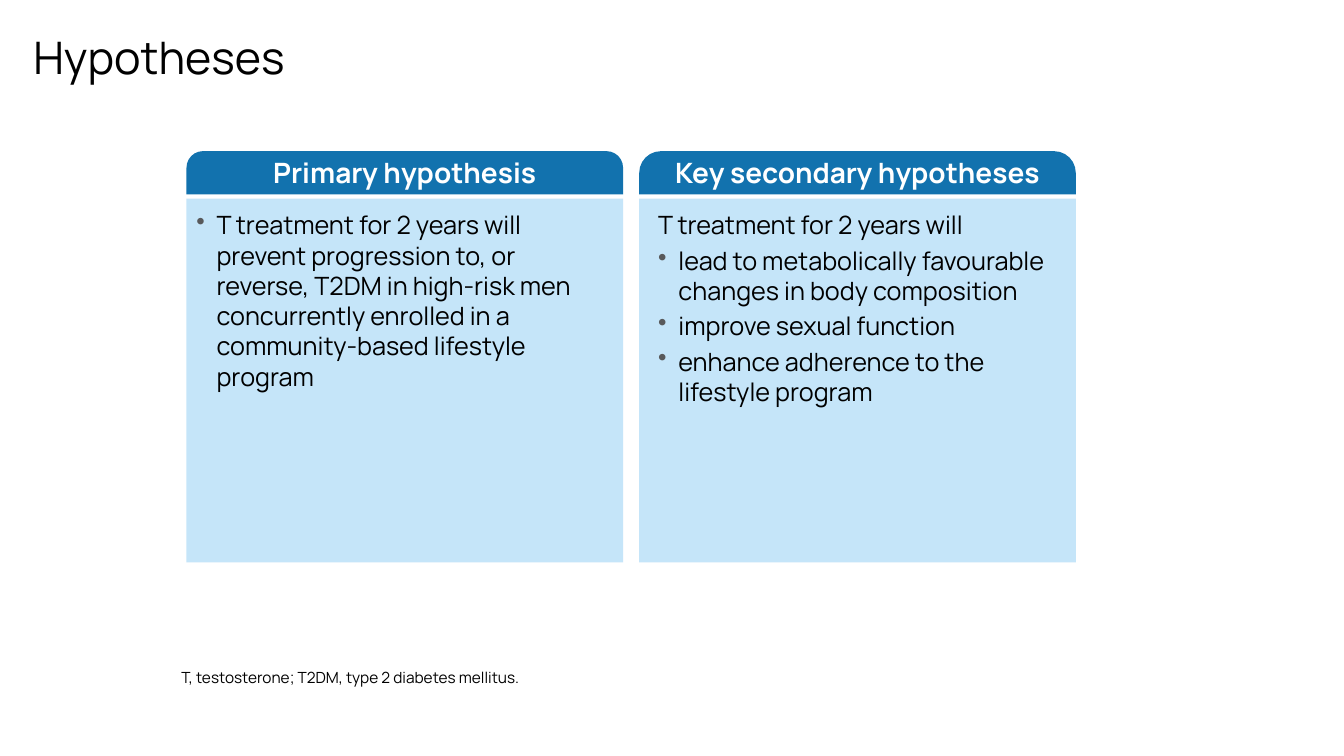
import pptx
import pptx.dml.color
import pptx.enum.shapes
import pptx.enum.text
import pptx.util
from lxml import etree
from pptx.oxml.ns import qn

Inches, Pt = pptx.util.Inches, pptx.util.Pt
MSO_SHAPE = pptx.enum.shapes.MSO_SHAPE
ALIGN = pptx.enum.text.PP_ALIGN
ANCHOR = pptx.enum.text.MSO_ANCHOR

FONT = "Manrope"
BLACK, WHITE, GREY = "000000", "FFFFFF", "58595B"
DARK_BLUE, LIGHT_BLUE = "1272AE", "C5E5F9"

TITLE = "Hypotheses"
FOOTNOTE = "T, testosterone; T2DM, type 2 diabetes mellitus."
# Each line: text, bulleted
COLUMNS = [
    {"heading": "Primary hypothesis", "corner": 0.38, "indent": 0,
     "lines": [("T treatment for 2 years will prevent progression to, or reverse, "
                "T2DM in high-risk men concurrently enrolled in a "
                "community-based lifestyle program", True)]},
    {"heading": "Key secondary hypotheses", "corner": 0.5, "indent": 0.09,
     "lines": [("T treatment for 2 years will", False),
               ("lead to metabolically favourable changes in body composition", True),
               ("improve sexual function", True),
               ("enhance adherence to the \vlifestyle program", True)]},
]

LEFT, TOP, WIDTH, PITCH = 1.85, 1.5, 4.33, 4.49
HEADER_HEIGHT, BODY_TOP, BODY_HEIGHT = 0.43, 1.97, 3.61
TEXT_HEIGHT, HANGING = 3, 0.2


def color(value):
    return pptx.dml.color.RGBColor.from_string(value)


def write(paragraph, text, size, text_color, bold=False):
    paragraph.text = text
    for run in paragraph.runs:
        run.font.name = FONT
        run.font.size = Pt(size)
        run.font.bold = bold
        run.font.color.rgb = color(text_color)


def set_indent(paragraph, left, first, bulleted):
    """Indent the paragraph in inches, with a grey bullet if asked for."""
    properties = paragraph._p.get_or_add_pPr()
    properties.set("marL", str(Inches(left)))
    properties.set("indent", str(Inches(first)))
    if bulleted:
        bullet_color = etree.SubElement(properties, qn("a:buClr"))
        etree.SubElement(bullet_color, qn("a:srgbClr"), val=GREY)
        etree.SubElement(properties, qn("a:buChar"), char="•")


def add_panel(group, kind, left, top, height, fill, corners):
    shape = group.shapes.add_shape(kind, Inches(left), Inches(top),
                                   Inches(WIDTH), Inches(height))
    for index, corner in enumerate(corners):
        shape.adjustments[index] = corner
    shape.shadow.inherit = False
    shape.fill.solid()
    shape.fill.fore_color.rgb = color(fill)
    shape.line.fill.background()


def add_column(slide, column, left):
    group = slide.shapes.add_group_shape()
    add_panel(group, MSO_SHAPE.ROUNDED_RECTANGLE, left, BODY_TOP,
              BODY_HEIGHT, LIGHT_BLUE, [0])
    add_panel(group, MSO_SHAPE.ROUND_2_SAME_RECTANGLE, left, TOP,
              HEADER_HEIGHT, DARK_BLUE, [column["corner"], 0])

    box = group.shapes.add_textbox(Inches(left), Inches(TOP - 0.01),
                                   Inches(WIDTH), Inches(TEXT_HEIGHT))
    frame = box.text_frame
    frame.word_wrap = True
    heading = frame.paragraphs[0]
    write(heading, column["heading"], 20, WHITE, bold=True)
    heading.alignment = ALIGN.CENTER
    heading.space_after = Pt(3)
    for index, (text, bulleted) in enumerate(column["lines"]):
        paragraph = frame.add_paragraph()
        write(paragraph, text, 18, BLACK)
        paragraph.space_before = Pt(12 if index == 0 else 3.6)
        hanging = HANGING if bulleted else 0
        set_indent(paragraph, column["indent"] + hanging, -hanging, bulleted)


def place_text(shape, box, text, size, anchor):
    shape.left, shape.top, shape.width, shape.height = map(Inches, box)
    frame = shape.text_frame
    frame.word_wrap = True
    frame.vertical_anchor = anchor
    paragraph = frame.paragraphs[0]
    write(paragraph, text, size, BLACK)
    paragraph.alignment = ALIGN.LEFT
    paragraph.line_spacing = 0.9


def main():
    presentation = pptx.Presentation()
    presentation.slide_width = Inches(13.33)
    presentation.slide_height = Inches(7.5)
    slide = presentation.slides.add_slide(presentation.slide_layouts[5])

    place_text(slide.shapes.title, (0.23, 0.08, 11.63, 1.03), TITLE, 32, ANCHOR.MIDDLE)
    for index, column in enumerate(COLUMNS):
        add_column(slide, column, LEFT + index * PITCH)
    footnote = slide.shapes.add_textbox(0, 0, 0, 0)
    place_text(footnote, (1.7, 6.59, 10.77, 0.27), FOOTNOTE, 11, ANCHOR.BOTTOM)

    presentation.save("out.pptx")


if __name__ == "__main__":
    main()
